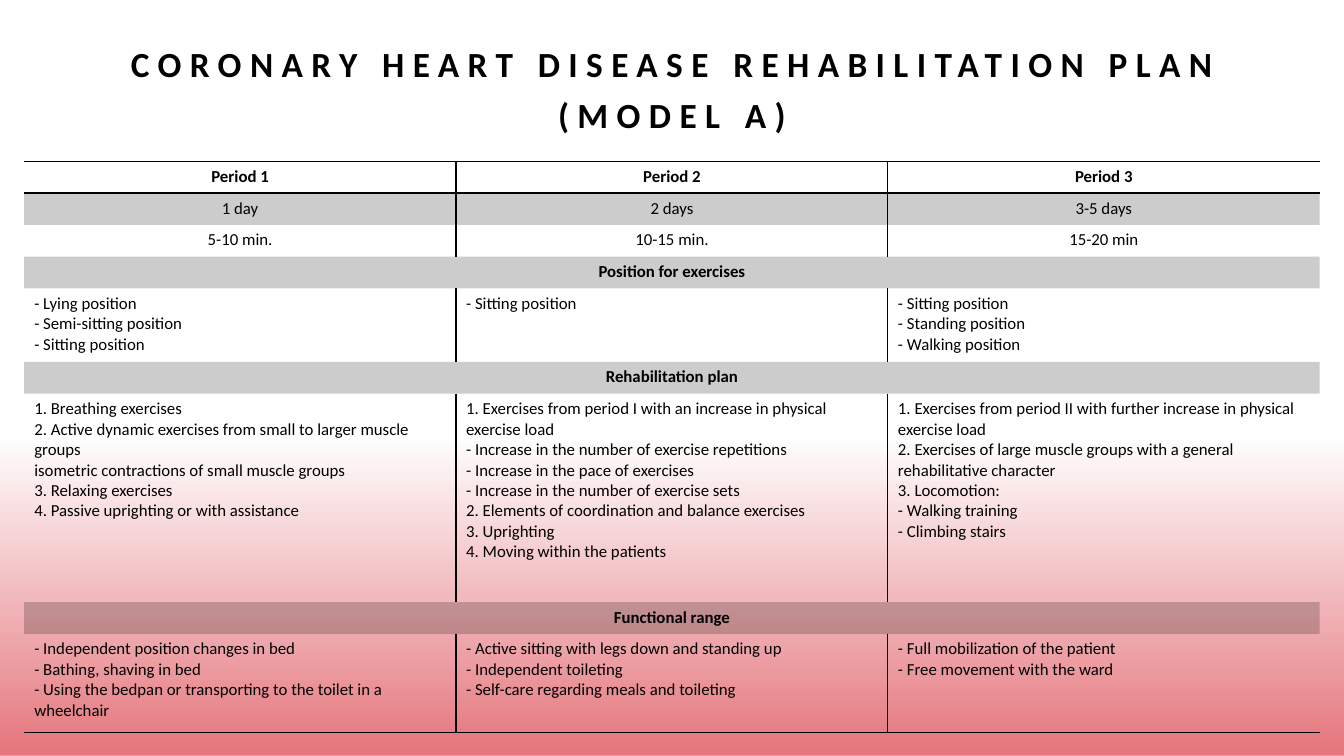
from dataclasses import dataclass

from lxml.etree import SubElement
from pptx import Presentation
from pptx.dml.color import RGBColor
from pptx.enum.shapes import MSO_SHAPE as Shape
from pptx.enum.text import MSO_ANCHOR as Anchor, PP_ALIGN as Align
from pptx.oxml.ns import qn
from pptx.slide import Slide
from pptx.table import _Cell as Cell
from pptx.text.text import TextFrame
from pptx.util import Inches, Pt


@dataclass(frozen=True)
class Theme:
    """Colours and type sizes of the slide."""
    font: str = "Calibri"
    ink: RGBColor = RGBColor(0, 0, 0)
    glow: RGBColor = RGBColor(0xE5, 0x75, 0x7C)
    title_size: float = 25.2
    title_spacing: int = 600
    body_size: float = 12
    band_opacity: int = 20
    rule_width: float = 1


@dataclass(frozen=True)
class PlanRow:
    """One row of the plan; a single text spans all columns."""
    texts: tuple[str, ...]
    height: float
    align: Align = Align.CENTER
    bold: bool = False
    shaded: bool = False


THEME = Theme()
TABLE_WIDTH, TABLE_HEIGHT, COLUMNS = 12.85, 5.67, 3
POSITION_HEIGHT, PLAN_HEIGHT, RANGE_HEIGHT = 0.73, 2.07, 0.98
LINE_HEIGHT = (TABLE_HEIGHT - POSITION_HEIGHT - PLAN_HEIGHT - RANGE_HEIGHT) / 6


def section(heading: str) -> PlanRow:
    """Return a shaded heading row."""
    return PlanRow((heading,), LINE_HEIGHT, bold=True, shaded=True)


ROWS = (
    PlanRow(("Period 1", "Period 2", "Period 3"), LINE_HEIGHT, bold=True),
    PlanRow(("1 day", "2 days", "3-5 days"), LINE_HEIGHT, shaded=True),
    PlanRow(("5-10 min.", "10-15 min.", "15-20 min"), LINE_HEIGHT),
    section("Position for exercises"),
    PlanRow((
        "- Lying position\n- Semi-sitting position\n- Sitting position",
        "- Sitting position",
        "- Sitting position\n- Standing position\n- Walking position",
    ), POSITION_HEIGHT, Align.LEFT),
    section("Rehabilitation plan"),
    PlanRow((
        "1. Breathing exercises\n"
        "2. Active dynamic exercises from small to larger muscle groups\n"
        "isometric contractions of small muscle groups\n"
        "3. Relaxing exercises\n"
        "4. Passive uprighting or with assistance",
        "1. Exercises from period I with an increase in physical exercise load\n"
        "- Increase in the number of exercise repetitions\n"
        "- Increase in the pace of exercises\n"
        "- Increase in the number of exercise sets\n"
        "2. Elements of coordination and balance exercises\n"
        "3. Uprighting\n"
        "4. Moving within the patients",
        "1. Exercises from period II with further increase in physical exercise load\n"
        "2. Exercises of large muscle groups with a general rehabilitative character\n"
        "3. Locomotion:\n"
        "- Walking training\n"
        "- Climbing stairs",
    ), PLAN_HEIGHT, Align.LEFT),
    section("Functional range"),
    PlanRow((
        "- Independent position changes in bed\n"
        "- Bathing, shaving in bed\n"
        "- Using the bedpan or transporting to the toilet in a wheelchair",
        "- Active sitting with legs down and standing up\n"
        "- Independent toileting\n"
        "- Self-care regarding meals and toileting",
        "- Full mobilization of the patient\n- Free movement with the ward",
    ), RANGE_HEIGHT, Align.LEFT),
)


def write(frame: TextFrame, text: str, size: float, bold: bool, align: Align) -> None:
    """Fill a text frame with evenly styled paragraphs."""
    frame.text = text
    for para in frame.paragraphs:
        para.alignment = align
        para.font.name = THEME.font
        para.font.size = Pt(size)
        para.font.bold = bold
        para.font.color.rgb = THEME.ink


def set_borders(cell: Cell, ruled: set[str]) -> None:
    """Rule the named sides of a cell and clear the others."""
    properties = cell._tc.get_or_add_tcPr()
    for side in "LRTB":
        line = SubElement(properties, qn(f"a:ln{side}"), w=str(Pt(THEME.rule_width)))
        if side in ruled:
            fill = SubElement(line, qn("a:solidFill"))
            SubElement(fill, qn("a:srgbClr"), val=str(THEME.ink))
        else:
            SubElement(line, qn("a:noFill"))


def shade(cell: Cell, shaded: bool) -> None:
    """Give a cell a translucent band or no fill."""
    if not shaded:
        cell.fill.background()
        return
    cell.fill.solid()
    cell.fill.fore_color.rgb = THEME.ink
    colour = cell._tc.tcPr.find(qn("a:solidFill")).find(qn("a:srgbClr"))
    SubElement(colour, qn("a:alpha"), val=str(THEME.band_opacity * 1000))


def sides(row: int, column: int) -> set[str]:
    """Return the ruled sides of the cell at a grid position."""
    ruled: set[str] = set()
    if len(ROWS[row].texts) == COLUMNS:
        ruled |= {"L"} if column > 0 else set()
        ruled |= {"R"} if column < COLUMNS - 1 else set()
    ruled |= {"T"} if row in (0, 1) else set()
    ruled |= {"B"} if row in (0, len(ROWS) - 1) else set()
    return ruled


def add_glow(page: Slide) -> None:
    """Fade a colour in towards the bottom of the page."""
    box = page.shapes.add_shape(
        Shape.RECTANGLE, Inches(0), Inches(3.84), Inches(13.33), Inches(3.66))
    box.shadow.inherit = False
    box.line.fill.background()
    box.fill.gradient()
    box.fill.gradient_angle = 270
    for stop, position in zip(box.fill.gradient_stops, (0.14, 1)):
        stop.color.rgb = THEME.glow
        stop.position = position
    clear = box.element.xpath(".//a:gs[1]/a:srgbClr")[0]
    SubElement(clear, qn("a:alpha"), val="0")


def add_title(page: Slide) -> None:
    """Add the widely spaced title."""
    box = page.shapes.add_textbox(Inches(1.04), Inches(0.71), Inches(11.25), Inches(0.68))
    frame = box.text_frame
    frame.word_wrap = True
    frame.vertical_anchor = Anchor.BOTTOM
    write(frame, "CORONARY HEART DISEASE REHABILITATION PLAN\n(MODEL A)",
          THEME.title_size, True, Align.CENTER)
    for para in frame.paragraphs:
        para.line_spacing = 1.2
        for span in para.runs:
            span.font._element.set("spc", str(THEME.title_spacing))


def add_plan(page: Slide) -> None:
    """Add the rehabilitation table."""
    table = page.shapes.add_table(
        len(ROWS), COLUMNS, Inches(0.24), Inches(1.6),
        Inches(TABLE_WIDTH), Inches(TABLE_HEIGHT)).table
    table.first_row = table.horz_banding = False
    for row, plan in enumerate(ROWS):
        table.rows[row].height = Inches(plan.height)
        for column in range(COLUMNS):
            cell = table.cell(row, column)
            set_borders(cell, sides(row, column))
            shade(cell, plan.shaded)
        if len(plan.texts) == 1:
            table.cell(row, 0).merge(table.cell(row, COLUMNS - 1))
        for column, text in enumerate(plan.texts):
            write(table.cell(row, column).text_frame, text,
                  THEME.body_size, plan.bold, plan.align)


def main() -> None:
    """Build and save the slide."""
    deck = Presentation()
    deck.slide_width, deck.slide_height = Inches(13.33), Inches(7.5)
    page = deck.slides.add_slide(deck.slide_layouts[6])
    add_glow(page)
    add_title(page)
    add_plan(page)
    deck.save("out.pptx")


if __name__ == "__main__":
    main()
